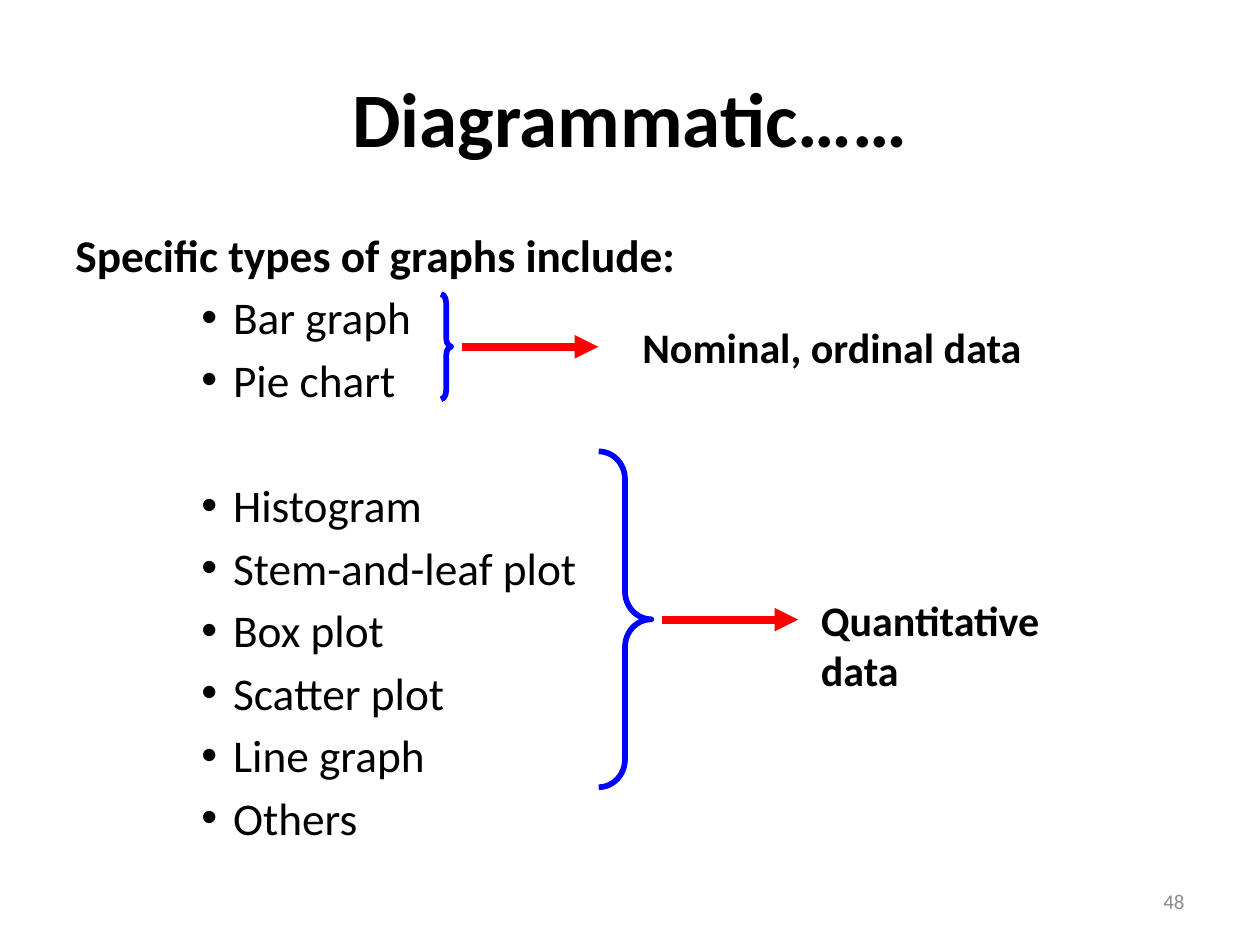
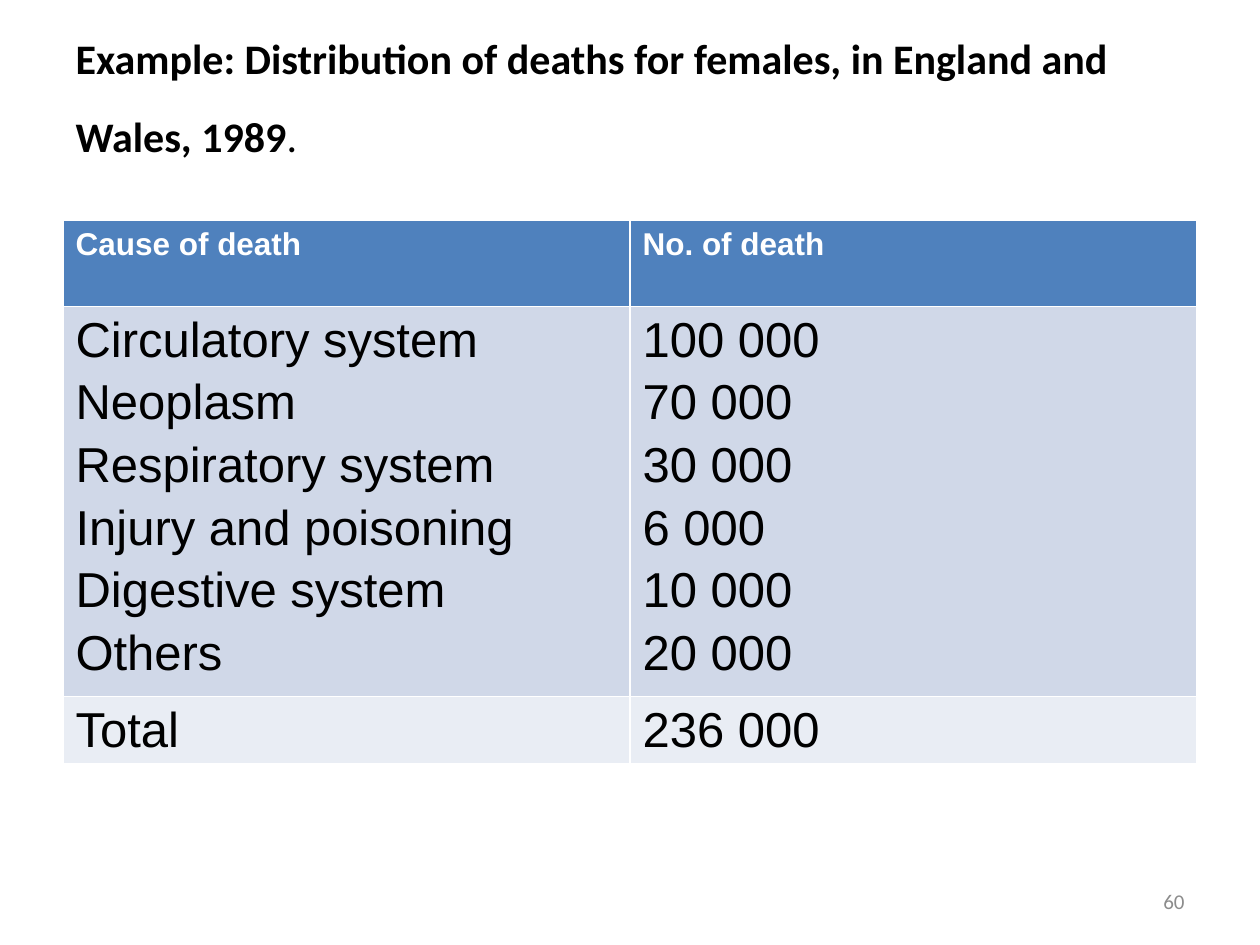
from lxml.etree import SubElement
from pptx import Presentation
from pptx.dml.color import RGBColor
from pptx.enum.shapes import MSO_CONNECTOR, MSO_SHAPE
from pptx.enum.text import MSO_ANCHOR, MSO_AUTO_SIZE, PP_ALIGN
from pptx.oxml.ns import qn
from pptx.util import Cm, Pt

COLORS = {
    "text": "000000",
    "muted": "8C8C8C",
    "white": "FFFFFF",
    "brace": "0000FF",
    "arrow": "FF0000",
    "header": "4F81BD",
    "band_dark": "D0D8E8",
    "band_light": "E9EDF4",
}
FRAME = {"word_wrap": True, "auto_size": MSO_AUTO_SIZE.NONE, "vertical_anchor": MSO_ANCHOR.TOP}
FONT = {"name": "Calibri", "size": Pt(24), "bold": True}
TABLE_FONT = {"name": "Arial", "size": Pt(28), "bold": False}
ITEM_GAP = Pt(4.6)
GROUP_GAP = Pt(40.8)
LEFT, WIDTH = 1.27, 22.86


def color(name):
    return RGBColor.from_string(COLORS[name])


def apply(target, values):
    for key, value in values.items():
        setattr(target, key, value)


class Builder:
    def __init__(self):
        self.deck = Presentation()
        self.deck.slide_width = Cm(25.4)
        self.deck.slide_height = Cm(19.05)
        self.page = None

    def start(self, number):
        self.page = self.deck.slides.add_slide(self.deck.slide_layouts[5])
        self.text(18.2, 17.65, 5.93, 1.02, str(number), {"size": Pt(12), "bold": False},
                  "muted", {"alignment": PP_ALIGN.RIGHT},
                  {"vertical_anchor": MSO_ANCHOR.MIDDLE})

    def add_span(self, para, words, font, tint="text", layout=None):
        apply(para, layout or {})
        span = para.add_run()
        span.text = words
        apply(span.font, {**FONT, **font})
        span.font.color.rgb = color(tint)

    def title(self, top, alignment, spans):
        box = self.page.shapes.title
        apply(box, {"left": Cm(LEFT), "top": Cm(top), "width": Cm(WIDTH), "height": Cm(3.18)})
        apply(box.text_frame, {**FRAME, "vertical_anchor": MSO_ANCHOR.MIDDLE})
        for words, font in spans:
            self.add_span(box.text_frame.paragraphs[0], words, font,
                          layout={"alignment": alignment})

    def text(self, left, top, width, height, words, font=None, tint="text", layout=None, frame=None):
        box = self.page.shapes.add_textbox(Cm(left), Cm(top), Cm(width), Cm(height))
        apply(box.text_frame, {**FRAME, **(frame or {})})
        self.add_span(box.text_frame.paragraphs[0], words, font or {}, tint, layout)
        return box

    def bullets(self, box, groups, font):
        for group in groups:
            for position, words in enumerate(group):
                new_group = position == 0 and group is not groups[0]
                para = box.text_frame.add_paragraph()
                self.add_span(para, words, font,
                              layout={"space_before": GROUP_GAP if new_group else ITEM_GAP})
                properties = para._p.get_or_add_pPr()
                properties.set("marL", str(Cm(3.18)))
                properties.set("indent", str(-Cm(0.64)))
                SubElement(properties, qn("a:buFont"), typeface="Arial")
                SubElement(properties, qn("a:buChar"), char="•")

    def brace(self, left, top, width, height, curl):
        brace = self.page.shapes.add_shape(
            MSO_SHAPE.RIGHT_BRACE, Cm(left), Cm(top), Cm(width), Cm(height))
        brace.adjustments[0] = curl
        brace.shadow.inherit = False
        brace.fill.background()
        brace.line.color.rgb = color("brace")
        brace.line.width = Pt(3.25)

    def arrow(self, left, middle, length):
        arrow = self.page.shapes.add_connector(
            MSO_CONNECTOR.STRAIGHT, Cm(left), Cm(middle), Cm(left + length), Cm(middle))
        arrow.line.color.rgb = color("arrow")
        arrow.line.width = Pt(4.5)
        SubElement(arrow.get_or_add_ln(), qn("a:tailEnd"), type="triangle")
        SubElement(arrow._element.spPr, qn("a:effectLst"))

    def cell(self, cell, lines, fill, font, tint):
        properties = cell._tc.get_or_add_tcPr()
        for side in ("lnL", "lnR", "lnT", "lnB"):
            border = SubElement(properties, qn(f"a:{side}"), w=str(Pt(1)))
            paint = SubElement(border, qn("a:solidFill"))
            SubElement(paint, qn("a:srgbClr"), val=COLORS["white"])
        cell.fill.solid()
        cell.fill.fore_color.rgb = color(fill)
        for index, words in enumerate(lines):
            para = cell.text_frame.add_paragraph() if index else cell.text_frame.paragraphs[0]
            self.add_span(para, words, font, tint, {"space_before": ITEM_GAP if index else Pt(0)})

    def table(self, top, rows):
        heights = [row["height"] for row in rows]
        table = self.page.shapes.add_table(
            len(rows), 2, Cm(LEFT), Cm(top), Cm(WIDTH), Cm(sum(heights))).table
        table.horz_banding = False
        for index, row in enumerate(rows):
            table.rows[index].height = Cm(row["height"])
            for column, lines in enumerate(row["cells"]):
                self.cell(table.cell(index, column), lines, row["fill"],
                          {**TABLE_FONT, **row.get("font", {})}, row.get("tint", "text"))


def graph_types(builder):
    builder.start(48)
    builder.title(0.76, PP_ALIGN.CENTER, [("Diagrammatic……", {"size": Pt(44)})])
    size = Pt(25.9)
    body = builder.text(LEFT, 4.45, WIDTH, 12.57, "Specific types of graphs include:", {"size": size})
    groups = [
        ["Bar graph", "Pie chart"],
        ["Histogram", "Stem-and-leaf plot", "Box plot", "Scatter plot", "Line graph", "Others"],
    ]
    builder.bullets(body, groups, {"size": size, "bold": False})
    builder.brace(8.89, 5.93, 0.21, 2.12, 0.83)
    builder.brace(12.07, 9.1, 1.06, 6.77, 0.53)
    for left, middle in ((9.31, 6.99), (13.34, 12.49)):
        builder.arrow(left, middle, 2.75)
    builder.text(12.7, 6.35, 9.53, 1.27, "Nominal, ordinal data")
    builder.text(16.3, 11.85, 6.35, 2.31, "Quantitative data")


def deaths_table(builder):
    builder.start(60)
    builder.title(0.42, PP_ALIGN.LEFT, [
        ("Example: Distribution of deaths for females, in England and Wales, 1989", {}),
        (".", {"bold": False}),
        (" ", {"size": Pt(40), "bold": False}),
    ])
    deaths = {
        "Circulatory system": "100 000",
        "Neoplasm": "70 000",
        "Respiratory system": "30 000",
        "Injury and poisoning": "6 000",
        "Digestive system": "10 000",
        "Others": "20 000",
    }
    builder.table(4.45, [
        {"height": 1.73, "cells": [["Cause of death"], ["No. of death"]], "fill": "header",
         "font": {"size": Pt(18), "bold": True}, "tint": "white"},
        {"height": 7.86, "cells": [list(deaths), list(deaths.values())], "fill": "band_dark"},
        {"height": 1.35, "cells": [["Total"], ["236 000"]], "fill": "band_light"},
    ])


def main():
    builder = Builder()
    graph_types(builder)
    deaths_table(builder)
    builder.deck.save("out.pptx")


if __name__ == "__main__":
    main()
